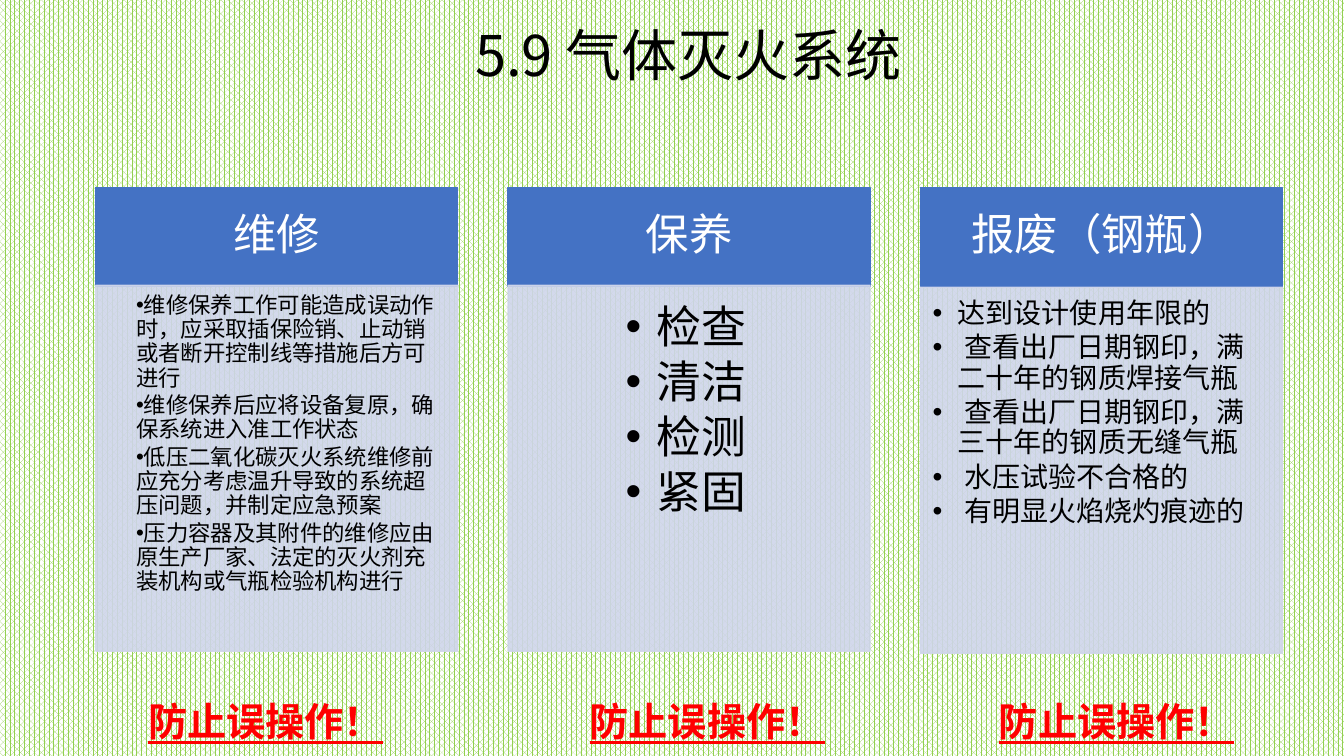
"""Build the slide on repair, upkeep and scrapping of gas fire-extinguishing systems."""

from dataclasses import dataclass

from lxml.etree import SubElement
from pptx import Presentation
from pptx.dml.color import RGBColor
from pptx.enum.dml import MSO_PATTERN
from pptx.enum.shapes import MSO_SHAPE
from pptx.enum.text import MSO_ANCHOR, MSO_AUTO_SIZE, PP_ALIGN
from pptx.oxml.ns import qn
from pptx.shapes.autoshape import Shape
from pptx.slide import Slide
from pptx.text.text import TextFrame, _Paragraph
from pptx.util import Inches, Pt


@dataclass(frozen=True)
class Theme:
    font: str = "Noto Sans CJK SC"
    ink: str = "000000"
    heading_ink: str = "FFFFFF"
    heading_fill: str = "4472C4"
    body_fill: str = "CFD5EA"
    body_opacity: int = 90
    warning_ink: str = "FF0000"
    stripe: str = "92D050"
    ground: str = "FFFFFF"
    title_size: int = 40
    heading_size: int = 31
    warning_size: int = 28


@dataclass(frozen=True)
class Area:
    """A rectangle on a grid of 100 columns by 100 rows."""

    column: float
    row: float
    columns: float
    rows: float


@dataclass(frozen=True)
class Insets:
    left: float
    top: float
    right: float
    bottom: float


@dataclass(frozen=True)
class Topic:
    heading: str
    items: tuple[str, ...]
    size: int
    insets: Insets
    margin: float
    hanging: float
    warning_column: float
    body_row: float = 37.73
    align: PP_ALIGN = PP_ALIGN.LEFT


THEME = Theme()
SLIDE_WIDTH, SLIDE_HEIGHT = Inches(13.33), Inches(7.5)
TITLE_AREA = Area(9.68, 3.07, 83.05, 12.53)
FIRST_COLUMN, COLUMN_STEP, PANEL_COLUMNS = 7.13, 30.68, 26.93
HEADING_ROW, HEADING_ROWS, BODY_ROWS = 24.8, 13.07, 48.4
WARNING_ROW, WARNING_COLUMNS, WARNING_ROWS = 91.6, 19.2, 7.6
HEADING_INSETS = Insets(0.24, 0.14, 0.24, 0.14)
HEADING_GAP, ITEM_GAP = 35, 15

TOPICS = (
    Topic(
        "维修",
        (
            "维修保养工作可能造成误动作时，应采取插保险销、止动销或者断开控制线等措施后方可进行",
            "维修保养后应将设备复原，确保系统进入准工作状态",
            "低压二氧化碳灭火系统维修前应充分考虑温升导致的系统超压问题，并制定应急预案",
            "压力容器及其附件的维修应由原生产厂家、法定的灭火剂充装机构或气瓶检验机构进行",
        ),
        16, Insets(0.09, 0.09, 0.12, 0.14), 0.31, 0, 10.28,
    ),
    Topic(
        "保养",
        ("检查", "清洁", "检测", "紧固"),
        32, Insets(0.19, 0.19, 0.25, 0.28), 0.31, 0.31, 43.14,
        align=PP_ALIGN.CENTER,
    ),
    Topic(
        "报废（钢瓶）",
        (
            "达到设计使用年限的",
            " 查看出厂日期钢印，满二十年的钢质焊接气瓶",
            " 查看出厂日期钢印，满三十年的钢质无缝气瓶",
            " 水压试验不合格的",
            " 有明显火焰烧灼痕迹的",
        ),
        20, Insets(0.12, 0.12, 0.16, 0.17), 0.25, 0.25, 73.59,
        body_row=38,
    ),
)


def place(area: Area) -> tuple[int, int, int, int]:
    """Turn grid positions into slide lengths."""
    return (
        int(SLIDE_WIDTH * area.column / 100),
        int(SLIDE_HEIGHT * area.row / 100),
        int(SLIDE_WIDTH * area.columns / 100),
        int(SLIDE_HEIGHT * area.rows / 100),
    )


def add_run(paragraph: _Paragraph, wording: str, size: int, ink: str, strong: bool = False) -> None:
    """Add one run in the theme font, bold and underlined if strong."""
    run = paragraph.add_run()
    run.text = wording
    run.font.name = THEME.font
    run.font.size = Pt(size)
    run.font.color.rgb = RGBColor.from_string(ink)
    run.font.bold = run.font.underline = strong
    SubElement(run.font._element, qn("a:ea"), typeface=THEME.font)


def space(paragraph: _Paragraph, gap: int, align: PP_ALIGN) -> None:
    """Set alignment, line spacing and a gap below in percent."""
    paragraph.alignment = align
    paragraph.line_spacing = 0.9
    after = SubElement(paragraph._p.get_or_add_pPr(), qn("a:spcAft"))
    SubElement(after, qn("a:spcPct"), val=str(gap * 1000))


def add_bullet(paragraph: _Paragraph, margin: float, hanging: float) -> None:
    """Give a paragraph a round bullet and its indents."""
    paragraph.level = 1
    properties = paragraph._p.get_or_add_pPr()
    properties.set("marL", str(Inches(margin)))
    properties.set("indent", str(-Inches(hanging)))
    SubElement(properties, qn("a:buFont"), typeface="Arial")
    SubElement(properties, qn("a:buChar"), char="•")


def add_panel(slide: Slide, area: Area, colour: str, insets: Insets, anchor: MSO_ANCHOR) -> Shape:
    """Draw a flat rectangle ready for text."""
    panel = slide.shapes.add_shape(MSO_SHAPE.RECTANGLE, *place(area))
    panel.shadow.inherit = False
    panel.fill.solid()
    panel.fill.fore_color.rgb = RGBColor.from_string(colour)
    panel.line.color.rgb = RGBColor.from_string(colour)
    panel.line.width = Pt(1)
    frame = panel.text_frame
    frame.word_wrap = True
    frame.vertical_anchor = anchor
    frame.margin_left, frame.margin_top = Inches(insets.left), Inches(insets.top)
    frame.margin_right, frame.margin_bottom = Inches(insets.right), Inches(insets.bottom)
    return panel


def add_label(slide: Slide, area: Area, wrap: bool) -> TextFrame:
    """Add an empty text box and return its text frame."""
    frame = slide.shapes.add_textbox(*place(area)).text_frame
    frame.word_wrap = wrap
    return frame


def add_topic(slide: Slide, topic: Topic, column: float) -> None:
    """Draw a heading with its list and warning."""
    heading_area = Area(column, HEADING_ROW, PANEL_COLUMNS, HEADING_ROWS)
    heading = add_panel(slide, heading_area, THEME.heading_fill, HEADING_INSETS, MSO_ANCHOR.MIDDLE)
    caption = heading.text_frame.paragraphs[0]
    space(caption, HEADING_GAP, PP_ALIGN.CENTER)
    add_run(caption, topic.heading, THEME.heading_size, THEME.heading_ink)

    body_area = Area(column, topic.body_row, PANEL_COLUMNS, BODY_ROWS)
    body = add_panel(slide, body_area, THEME.body_fill, topic.insets, MSO_ANCHOR.TOP)
    for colour in body.element.spPr.iter(qn("a:srgbClr")):
        SubElement(colour, qn("a:alpha"), val=str(THEME.body_opacity * 1000))
    for index, item in enumerate(topic.items):
        frame = body.text_frame
        paragraph = frame.add_paragraph() if index else frame.paragraphs[0]
        space(paragraph, ITEM_GAP, topic.align)
        add_bullet(paragraph, topic.margin, topic.hanging)
        add_run(paragraph, item, topic.size, THEME.ink)

    warning_area = Area(topic.warning_column, WARNING_ROW, WARNING_COLUMNS, WARNING_ROWS)
    warning = add_label(slide, warning_area, wrap=False)
    warning.auto_size = MSO_AUTO_SIZE.SHAPE_TO_FIT_TEXT
    add_run(warning.paragraphs[0], "防止误操作！", THEME.warning_size, THEME.warning_ink, strong=True)


def main() -> None:
    """Assemble and save the slide."""
    deck = Presentation()
    deck.slide_width, deck.slide_height = SLIDE_WIDTH, SLIDE_HEIGHT
    slide = deck.slides.add_slide(deck.slide_layouts[6])
    ground = slide.background.fill
    ground.patterned()
    ground.pattern = MSO_PATTERN.PERCENT_70
    ground.fore_color.rgb = RGBColor.from_string(THEME.stripe)
    ground.back_color.rgb = RGBColor.from_string(THEME.ground)

    title = add_label(slide, TITLE_AREA, wrap=True).paragraphs[0]
    space(title, HEADING_GAP, PP_ALIGN.CENTER)
    add_run(title, "5.9 气体灭火系统", THEME.title_size, THEME.ink)
    for index, topic in enumerate(TOPICS):
        add_topic(slide, topic, FIRST_COLUMN + index * COLUMN_STEP)
    deck.save("out.pptx")


if __name__ == "__main__":
    main()
